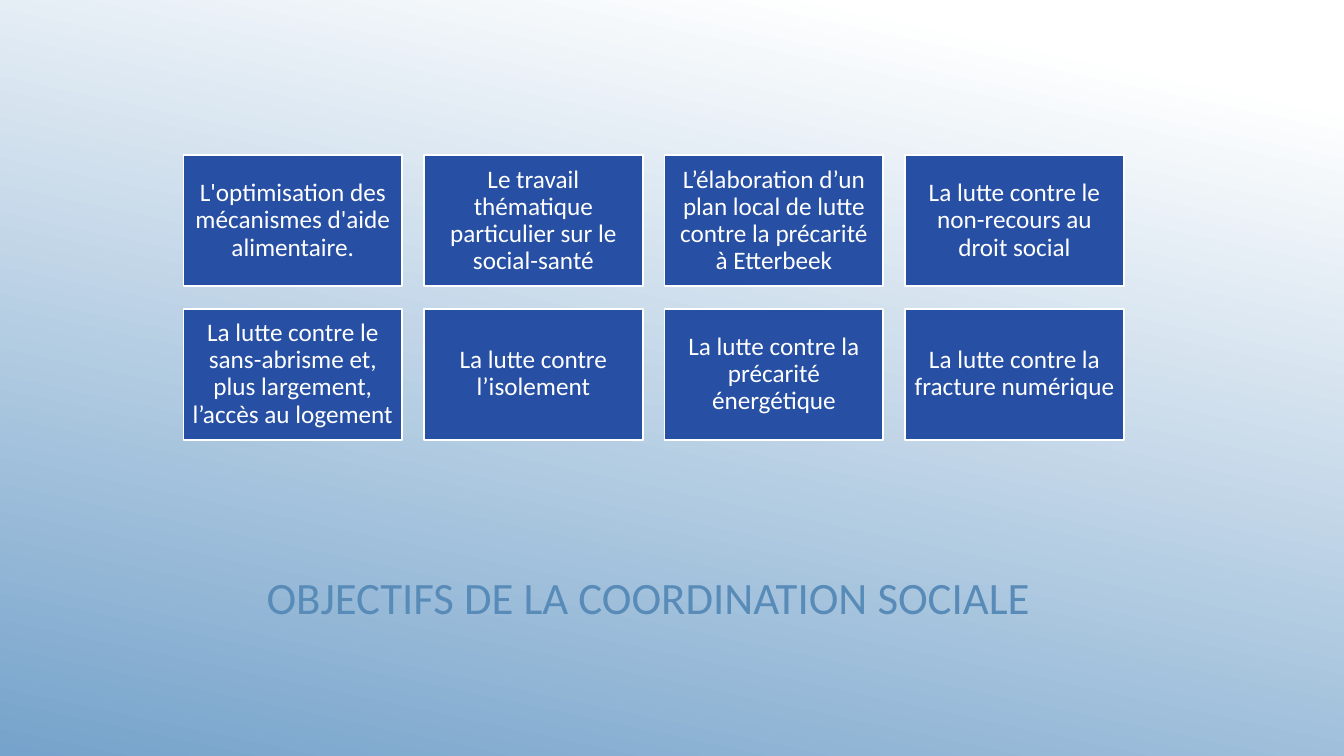
from dataclasses import dataclass

from pptx import Presentation
from pptx.dml.color import RGBColor
from pptx.enum.shapes import MSO_SHAPE
from pptx.enum.text import MSO_ANCHOR, MSO_AUTO_SIZE, PP_ALIGN
from pptx.slide import Slide
from pptx.text.text import TextFrame
from pptx.util import Pt

WHITE = RGBColor(0xFF, 0xFF, 0xFF)
SKY = RGBColor(0x76, 0xA3, 0xCB)
STEEL = RGBColor(0x58, 0x8B, 0xB8)
NAVY = RGBColor(0x27, 0x4F, 0xA4)
FONT = "Calibri"

LEFT, TOP = 131.04, 110.88
TILE_W, TILE_H = 156.24, 93.6
STEP_X, STEP_Y = 171.84, 109.6
COLS = 4
INSET = 5.04

GOALS = (
    "L'optimisation des mécanismes d'aide alimentaire.",
    "Le travail thématique particulier sur le social-santé",
    "L’élaboration d’un plan local de lutte contre la précarité à Etterbeek",
    "La lutte contre le non-recours au droit social",
    "La lutte contre le sans-abrisme et, plus largement, l’accès au logement",
    "La lutte contre l’isolement",
    "La lutte contre la précarité énergétique",
    "La lutte contre la fracture numérique",
)


@dataclass(frozen=True)
class Tile:
    text: str
    row: int
    col: int


def write(frame: TextFrame, text: str, size: float, color: RGBColor) -> None:
    """Fill a frame with one centred paragraph."""
    frame.text = text
    frame.word_wrap = True
    frame.auto_size = MSO_AUTO_SIZE.NONE
    frame.vertical_anchor = MSO_ANCHOR.MIDDLE
    para = frame.paragraphs[0]
    para.alignment = PP_ALIGN.CENTER
    para.line_spacing = 0.9
    font = para.runs[0].font
    font.name = FONT
    font.size = Pt(size)
    font.color.rgb = color


def paint_back(slide: Slide) -> None:
    fill = slide.background.fill
    fill.gradient()
    fill.gradient_angle = 258
    for stop, color, place in zip(fill.gradient_stops, (WHITE, SKY), (0.1, 1)):
        stop.color.rgb = color
        stop.position = place


def add_title(slide: Slide) -> None:
    title = slide.shapes.title
    title.left, title.top = Pt(LEFT), Pt(369.36)
    title.width, title.height = Pt(671.76), Pt(118.8)
    write(title.text_frame, "OBJECTIFS DE LA COORDINATION SOCIALE ", 32, STEEL)


def add_tile(slide: Slide, tile: Tile) -> None:
    shape = slide.shapes.add_shape(
        MSO_SHAPE.RECTANGLE,
        Pt(LEFT + tile.col * STEP_X), Pt(TOP + tile.row * STEP_Y),
        Pt(TILE_W), Pt(TILE_H),
    )
    shape.shadow.inherit = False
    shape.fill.solid()
    shape.fill.fore_color.rgb = NAVY
    shape.line.color.rgb = WHITE
    shape.line.width = Pt(1.25)
    frame = shape.text_frame
    frame.margin_left = frame.margin_right = Pt(INSET)
    frame.margin_top = frame.margin_bottom = Pt(INSET)
    write(frame, tile.text, 18, WHITE)


def main() -> None:
    deck = Presentation()
    deck.slide_width, deck.slide_height = Pt(960), Pt(540)
    slide = deck.slides.add_slide(deck.slide_layouts.get_by_name("Title Only"))
    paint_back(slide)
    add_title(slide)
    for index, goal in enumerate(GOALS):
        add_tile(slide, Tile(goal, *divmod(index, COLS)))
    deck.save("out.pptx")


if __name__ == "__main__":
    main()
